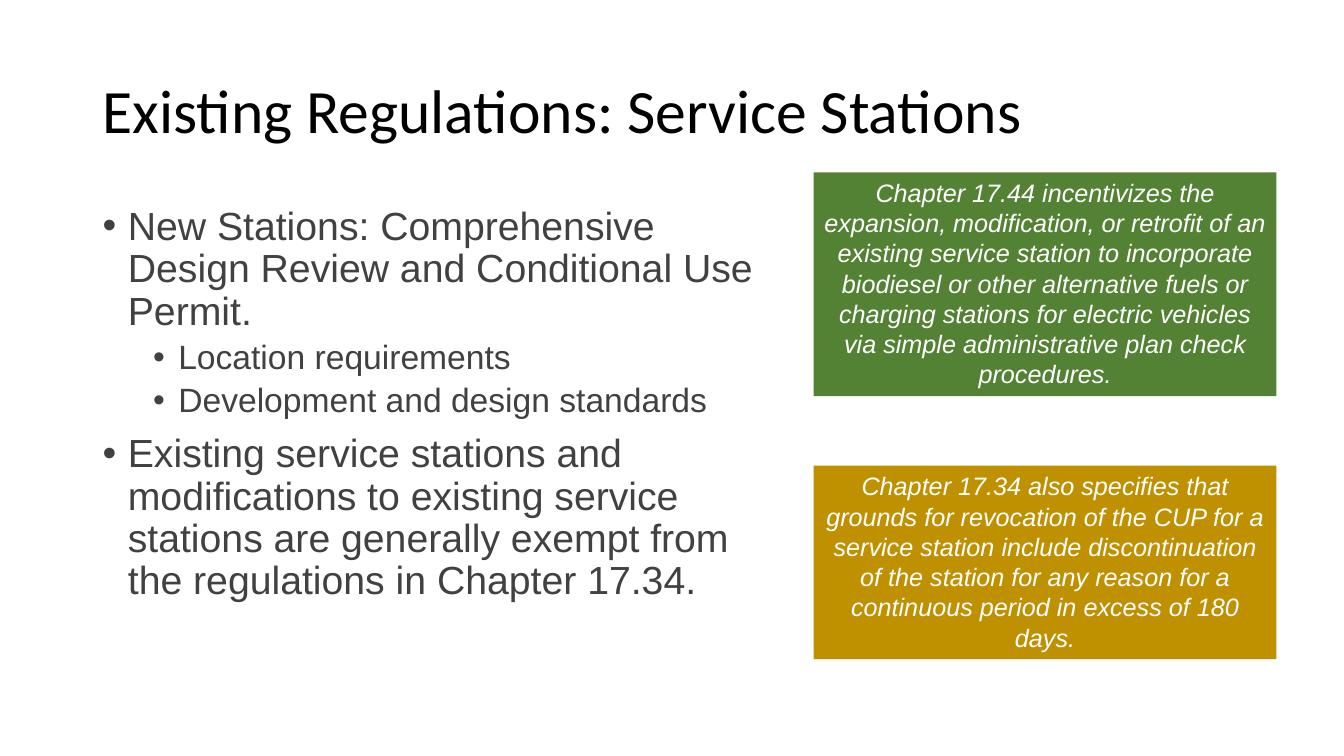
from lxml import etree
from pptx import Presentation
from pptx.dml.color import RGBColor
from pptx.enum.shapes import MSO_SHAPE
from pptx.enum.text import MSO_ANCHOR, MSO_AUTO_SIZE, PP_ALIGN
from pptx.oxml.ns import qn
from pptx.util import Inches, Pt

RECTANGLE = MSO_SHAPE.RECTANGLE
TOP = MSO_ANCHOR.TOP
MIDDLE = MSO_ANCHOR.MIDDLE
GROW = MSO_AUTO_SIZE.SHAPE_TO_FIT_TEXT
LEFT = PP_ALIGN.LEFT
CENTER = PP_ALIGN.CENTER

BULLETS = [
    (0, "New Stations: Comprehensive Design Review and Conditional Use Permit."),
    (1, "Location requirements"),
    (1, "Development and design standards"),
    (0, "Existing service stations and modifications to existing service stations "
        "are generally exempt from the regulations in Chapter 17.34."),
]
CALLOUTS = [
    (1.71, 2.22, "548235",
     "Chapter 17.44 incentivizes the expansion, modification, or retrofit of an "
     "existing service station to incorporate biodiesel or other alternative fuels "
     "or charging stations for electric vehicles via simple administrative plan "
     "check procedures."),
    (4.62, 1.92, "BF9000",
     "Chapter 17.34 also specifies that grounds for revocation of the CUP for a "
     "service station include discontinuation of the station for any reason for a "
     "continuous period in excess of 180 days."),
]


def color(value):
    return RGBColor.from_string(value)


def write(paragraph, text, size, fill, font="Arial", italic=False, align=LEFT,
          line_spacing=1.0, before=0):
    paragraph.alignment = align
    paragraph.line_spacing = line_spacing
    paragraph.space_before = Pt(before)
    span = paragraph.add_run()
    span.text = text
    span.font.name = font
    span.font.size = Pt(size)
    span.font.italic = italic
    span.font.color.rgb = color(fill)


class SlideBuilder:
    title_color = "000000"
    body_color = "414141"
    callout_color = "FFFFFF"

    def __init__(self, page):
        self.page = page

    def text_frame(self, left, top, width, height, anchor):
        box = self.page.shapes.add_textbox(
            Inches(left), Inches(top), Inches(width), Inches(height))
        frame = box.text_frame
        frame.word_wrap = True
        frame.vertical_anchor = anchor
        return frame

    def title(self, text):
        frame = self.text_frame(0.92, 0.4, 11.5, 1.45, MIDDLE)
        write(frame.paragraphs[0], text, 44, self.title_color,
              font="Calibri", line_spacing=0.9)

    def bullet_list(self, items):
        frame = self.text_frame(0.92, 2, 6.85, 4.76, TOP)
        for index, (level, text) in enumerate(items):
            paragraph = frame.add_paragraph() if index else frame.paragraphs[0]
            paragraph.level = level
            properties = paragraph._p.get_or_add_pPr()
            properties.set("marL", str(Inches(0.25 + 0.5 * level)))
            properties.set("indent", str(Inches(-0.25)))
            etree.SubElement(properties, qn("a:buFont"), typeface="Arial")
            etree.SubElement(properties, qn("a:buChar"), char="•")
            before = (5 if level else 10) if index else 0
            write(paragraph, text, 28 - 4 * level, self.body_color,
                  line_spacing=0.9, before=before)

    def callout(self, top, height, fill, text):
        box = self.page.shapes.add_shape(
            RECTANGLE, Inches(8.07), Inches(top), Inches(4.59), Inches(height))
        box.shadow.inherit = False
        box.fill.solid()
        box.fill.fore_color.rgb = color(fill)
        box.line.fill.background()
        frame = box.text_frame
        frame.word_wrap = True
        frame.auto_size = GROW
        frame.vertical_anchor = TOP
        write(frame.paragraphs[0], text, 18, self.callout_color,
              italic=True, align=CENTER)


def main():
    deck = Presentation()
    deck.slide_width = Inches(13.33)
    deck.slide_height = Inches(7.5)
    builder = SlideBuilder(deck.slides.add_slide(deck.slide_layouts[6]))
    builder.title("Existing Regulations: Service Stations")
    builder.bullet_list(BULLETS)
    for callout in CALLOUTS:
        builder.callout(*callout)
    deck.save("out.pptx")


if __name__ == "__main__":
    main()
